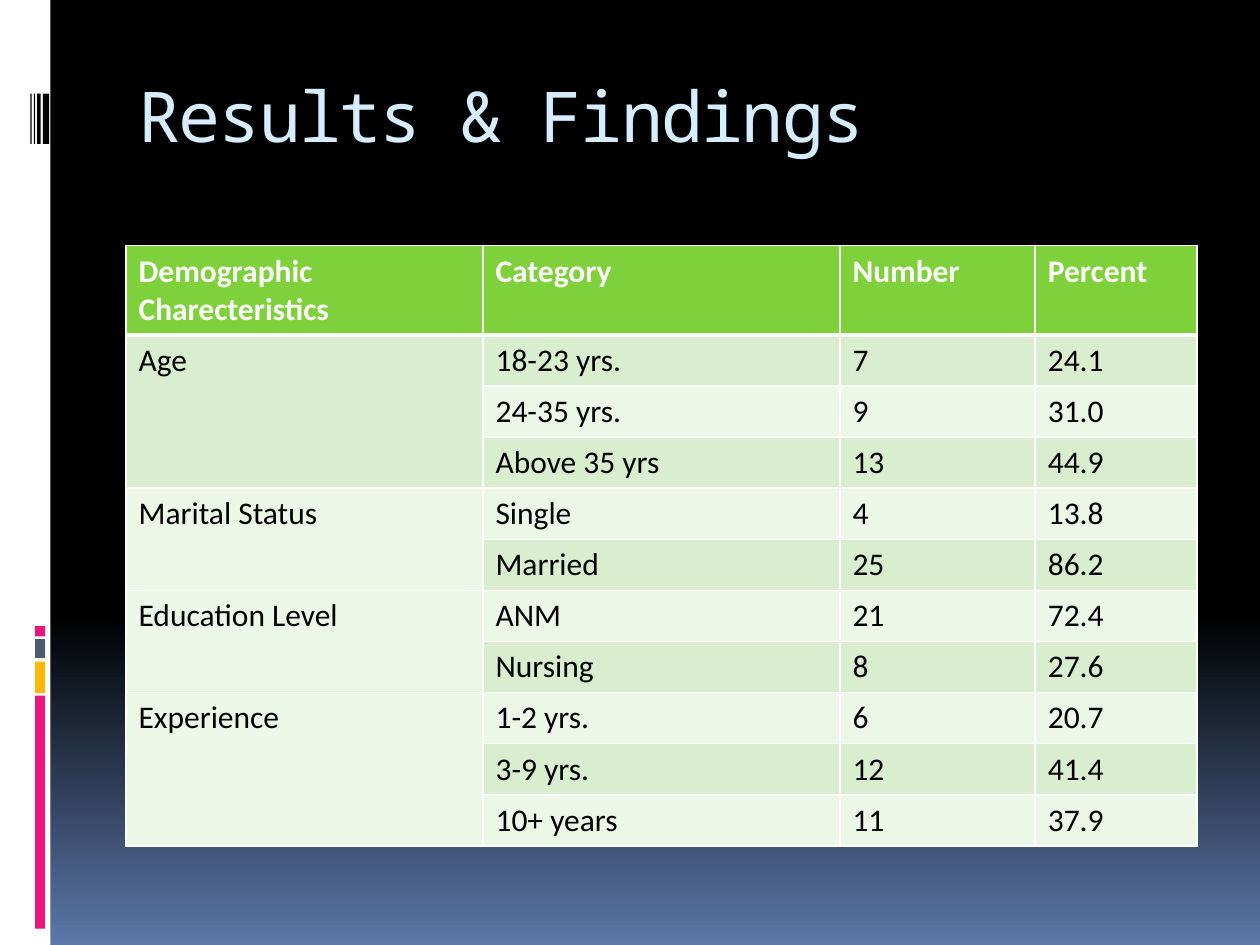
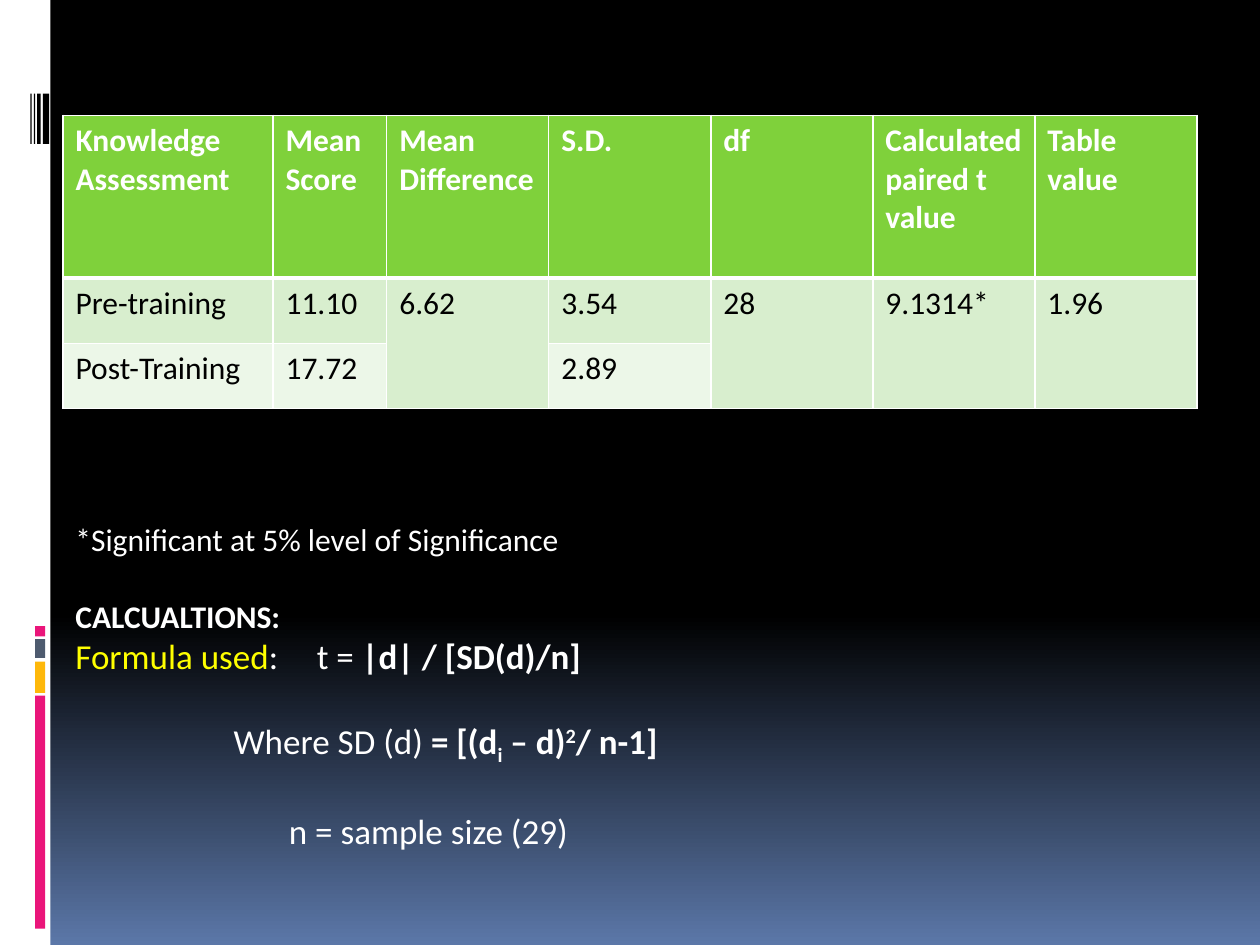
import dataclasses
import itertools

import lxml.etree
import pptx
import pptx.dml.color
import pptx.enum.shapes
import pptx.enum.text
import pptx.oxml.ns
import pptx.util

Pt = pptx.util.Pt
qn = pptx.oxml.ns.qn

BODY_FONT, TITLE_FONT = "Calibri", "Noto Sans Mono"
WHITE, BLACK, TITLE_BLUE, YELLOW = "FFFFFF", "000000", "D6ECFF", "FFFF00"
HEADER_GREEN, BANDS = "7FD13B", ("D8EECE", "ECF7E8")
PINK, GOLD, SLATE = "EA157A", "FEB80A", "4E5B6F"
BACKGROUND_STOPS = ((0, BLACK), (65, BLACK), (100, "5B77A8"))


@dataclasses.dataclass
class Bar:
    left: float
    top: float
    width: float
    height: float
    color: str


@dataclasses.dataclass
class Piece:
    text: str
    bold: bool = False
    color: str = WHITE
    baseline: int = 0


@dataclasses.dataclass
class Line:
    pieces: list[Piece]
    size: float = 20
    space_before: float = 0
    indent: float = 0
    tab_stop: float = 0


@dataclasses.dataclass
class TableSpec:
    left: float
    top: float
    widths: list[float]
    heights: list[float]
    rows: list[list[str]]  # an empty string continues the cell above


SIDE_BARS = [
    Bar(0, 0, 28.8, 540, WHITE),
    Bar(20, 397.5, 5.8, 133.2, PINK),
    Bar(20, 378, 5.8, 18, GOLD),
    Bar(20, 365.2, 5.8, 10.8, SLATE),
    Bar(20, 357.8, 5.8, 5.8, PINK),
    *(Bar(left, 53.5, width, 28.8, BLACK)
      for left, width in ((24.5, 3.6), (21.2, 2), (19.4, 0.7), (17.4, 0.7))),
]

DEMOGRAPHICS = TableSpec(
    72, 140.4, [204, 204, 111.6, 92.4], [51] + [29.2] * 10,
    [
        ["Demographic Charecteristics", "Category", "Number", "Percent"],
        ["Age", "18-23 yrs.", "7", "24.1"],
        ["", "24-35 yrs.", "9", "31.0"],
        ["", "Above 35 yrs", "13", "44.9"],
        ["Marital Status", "Single", "4", "13.8"],
        ["", "Married", "25", "86.2"],
        ["Education Level", "ANM", "21", "72.4"],
        ["", "Nursing", "8", "27.6"],
        ["Experience", "1-2 yrs.", "6", "20.7"],
        ["", "3-9 yrs.", "12", "41.4"],
        ["", "10+ years", "11", "37.9"],
    ])

KNOWLEDGE = TableSpec(
    36, 66, [120, 65] + [92.6] * 5, [92.8, 37.4, 37.4],
    [
        ["Knowledge Assessment", "Mean Score", "Mean Difference", "S.D.", "df",
         "Calculated paired t value", "Table value"],
        ["Pre-training", "11.10", "6.62", "3.54", "28", "9.1314*", "1.96"],
        ["Post-Training", "17.72", "", "2.89", "", "", ""],
    ])

CALCULATIONS = [
    Line([Piece("*Significant at 5% level of Significance")], 18),
    Line([Piece("CALCUALTIONS:", True)], 18, space_before=22),
    Line([Piece("Formula used", color=YELLOW), Piece(":\tt = "),
          Piece("|d| / [SD(d)/n]", True)], tab_stop=138),
    Line([Piece("Where SD (d) "), Piece("= [(d", True),
          Piece("i", True, baseline=-25), Piece(" – d)", True),
          Piece("2", True, baseline=30), Piece("/ n-1]", True)],
         space_before=24.4, indent=90.4),
    Line([Piece("n = sample size (29)")], space_before=24.4, indent=122),
]


def rgb(color: str) -> pptx.dml.color.RGBColor:
    return pptx.dml.color.RGBColor.from_string(color)


def style_run(run, font_name: str, size: float, color: str, bold: bool = False) -> None:
    run.font.name = font_name
    run.font.size = Pt(size)
    run.font.bold = bold
    run.font.color.rgb = rgb(color)


def add_solid(parent, color: str) -> None:
    fill = lxml.etree.SubElement(parent, qn("a:solidFill"))
    lxml.etree.SubElement(fill, qn("a:srgbClr"), val=color)


def add_base_slide(presentation):
    """Add a slide with the gradient background and the side band."""
    slide = presentation.slides.add_slide(presentation.slide_layouts[6])
    fill = slide.background.fill
    fill.gradient()
    fill.gradient_angle = 270
    stops = next(slide.element.iter(qn("a:gsLst")))
    for stop in list(stops):
        stops.remove(stop)
    for percent, color in BACKGROUND_STOPS:
        stop = lxml.etree.SubElement(stops, qn("a:gs"), pos=str(percent * 1000))
        lxml.etree.SubElement(stop, qn("a:srgbClr"), val=color)
    for bar in SIDE_BARS:
        shape = slide.shapes.add_shape(
            pptx.enum.shapes.MSO_SHAPE.RECTANGLE,
            Pt(bar.left), Pt(bar.top), Pt(bar.width), Pt(bar.height))
        shape.shadow.inherit = False
        shape.fill.solid()
        shape.fill.fore_color.rgb = rgb(bar.color)
        shape.line.fill.background()
    return slide


def add_text_frame(slide, left: float, top: float, width: float, height: float):
    box = slide.shapes.add_textbox(Pt(left), Pt(top), Pt(width), Pt(height))
    box.text_frame.word_wrap = True
    return box.text_frame


def add_title(slide, text: str) -> None:
    frame = add_text_frame(slide, 72, 40.3, 612, 72)
    frame.vertical_anchor = pptx.enum.text.MSO_ANCHOR.TOP
    frame.margin_top = Pt(1)
    frame.text = text
    run = frame.paragraphs[0].runs[0]
    style_run(run, TITLE_FONT, 40, TITLE_BLUE)
    run.font._element.set("spc", "-100")


def set_borders(cell, row: int) -> None:
    """Draw white cell edges, with a heavy rule below the header."""
    top = 3 if row == 1 else 1
    bottom = 3 if row == 0 else 1
    properties = cell._tc.get_or_add_tcPr()
    edges = (("a:lnL", 1), ("a:lnR", 1), ("a:lnT", top), ("a:lnB", bottom))
    for position, (tag, width) in enumerate(edges):
        edge = lxml.etree.Element(qn(tag), w=str(int(Pt(width))))
        add_solid(edge, WHITE)
        properties.insert(position, edge)


def add_data_table(slide, spec: TableSpec) -> None:
    row_count, column_count = len(spec.rows), len(spec.widths)
    table = slide.shapes.add_table(
        row_count, column_count, Pt(spec.left), Pt(spec.top),
        Pt(sum(spec.widths)), Pt(sum(spec.heights))).table
    for column, width in zip(table.columns, spec.widths):
        column.width = Pt(width)
    for table_row, height in zip(table.rows, spec.heights):
        table_row.height = Pt(height)

    for row, column in itertools.product(range(row_count), range(column_count)):
        cell, text = table.cell(row, column), spec.rows[row][column]
        header = row == 0
        cell.fill.solid()
        cell.fill.fore_color.rgb = rgb(HEADER_GREEN if header else BANDS[(row - 1) % 2])
        set_borders(cell, row)
        if text:
            cell.text = text
            style_run(cell.text_frame.paragraphs[0].runs[0], BODY_FONT, 18,
                      WHITE if header else BLACK, header)

    # Join each labelled cell with the empty cells below it
    for column in range(column_count):
        starts = [row for row in range(row_count) if spec.rows[row][column]]
        for start, end in itertools.pairwise(starts + [row_count]):
            if end - start > 1:
                table.cell(start, column).merge(table.cell(end - 1, column))


def add_lines(slide, lines: list[Line]) -> None:
    frame = add_text_frame(slide, 36, 293.8, 558, 216)
    for position, line in enumerate(lines):
        paragraph = frame.add_paragraph() if position else frame.paragraphs[0]
        paragraph.space_before = Pt(line.space_before)
        properties = paragraph._p.get_or_add_pPr()
        properties.set("marL", str(int(Pt(line.indent))))
        if line.tab_stop:
            tabs = lxml.etree.SubElement(properties, qn("a:tabLst"))
            lxml.etree.SubElement(tabs, qn("a:tab"), pos=str(int(Pt(line.tab_stop))), algn="l")
        for piece in line.pieces:
            run = paragraph.add_run()
            run.text = piece.text
            style_run(run, BODY_FONT, line.size, piece.color, piece.bold)
            if piece.baseline:
                run.font._element.set("baseline", str(piece.baseline * 1000))


def main() -> None:
    presentation = pptx.Presentation()
    presentation.slide_width, presentation.slide_height = Pt(720), Pt(540)

    # Demographic results
    slide = add_base_slide(presentation)
    add_title(slide, "Results & Findings")
    add_data_table(slide, DEMOGRAPHICS)

    # Knowledge test and its formula
    slide = add_base_slide(presentation)
    add_data_table(slide, KNOWLEDGE)
    add_lines(slide, CALCULATIONS)

    presentation.save("out.pptx")


if __name__ == "__main__":
    main()
